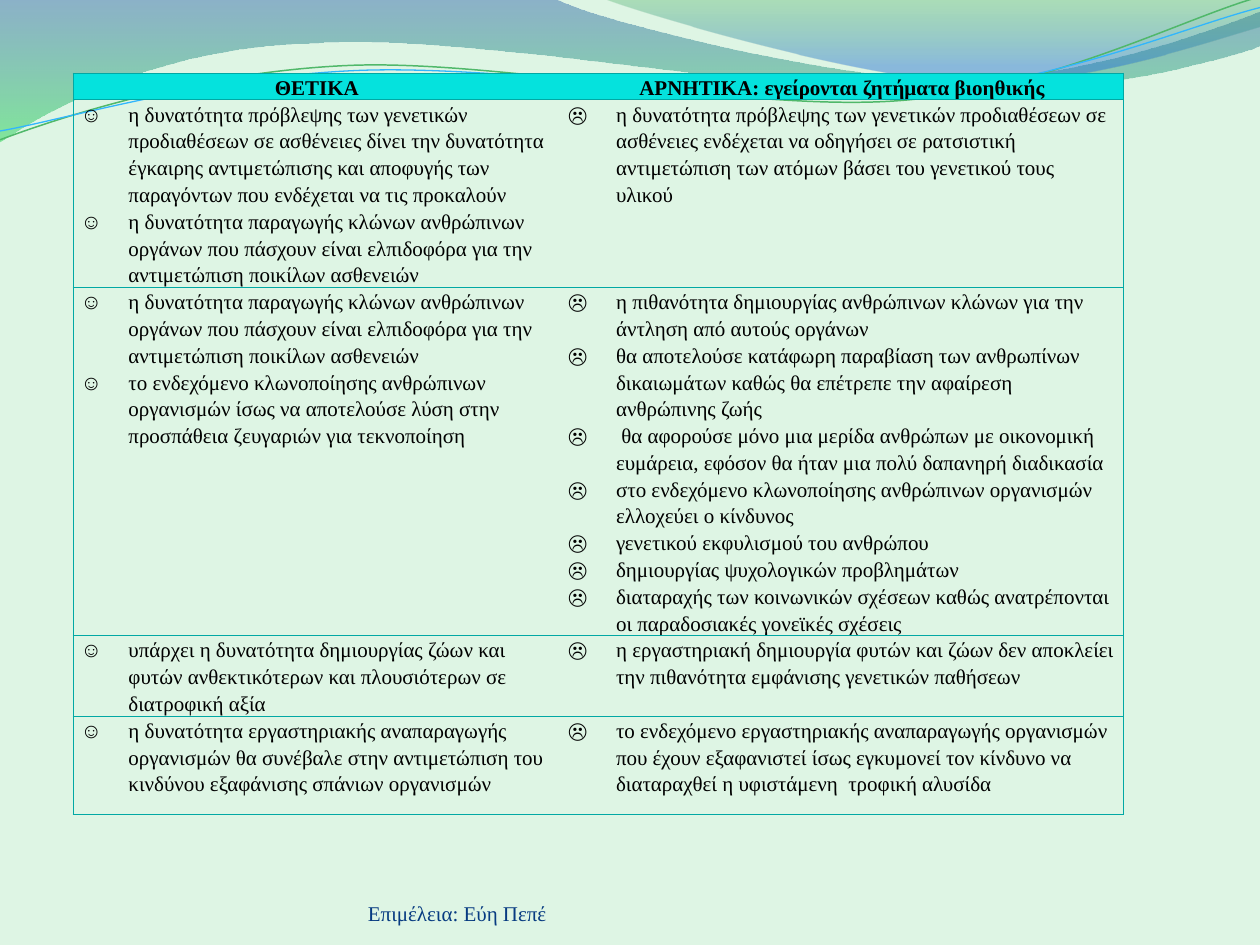
from lxml.etree import SubElement
from pptx import Presentation
from pptx.dml.color import RGBColor
from pptx.enum.text import MSO_ANCHOR, PP_ALIGN
from pptx.oxml.ns import qn
from pptx.util import Emu, Inches, Pt

FONT, SIZE, LINE_PITCH = "Times New Roman", 12, 15.3
BACKGROUND, HEADER_FILL, BORDER = "DEF5E4", "05E2DD", "01A8A4"
BLACK, NAVY = "000000", "073B81"

HEADERS = ["ΘΕΤΙΚΑ", "ΑΡΝΗΤΙΚΑ: εγείρονται ζητήματα βιοηθικής"]
BULLETS = ["☺", "☹"]
ORGAN_CLONES = ("η δυνατότητα παραγωγής κλώνων ανθρώπινων οργάνων που πάσχουν είναι "
                "ελπιδοφόρα για την αντιμετώπιση ποικίλων ασθενειών")
ROWS = [
    (["η δυνατότητα πρόβλεψης των γενετικών προδιαθέσεων σε ασθένειες δίνει την δυνατότητα "
      "έγκαιρης αντιμετώπισης και αποφυγής των παραγόντων που ενδέχεται να τις προκαλούν",
      ORGAN_CLONES],
     ["η δυνατότητα πρόβλεψης των γενετικών προδιαθέσεων σε ασθένειες ενδέχεται να οδηγήσει "
      "σε ρατσιστική αντιμετώπιση των ατόμων βάσει του γενετικού τους υλικού"]),
    ([ORGAN_CLONES,
      "το ενδεχόμενο κλωνοποίησης ανθρώπινων οργανισμών ίσως να αποτελούσε λύση στην "
      "προσπάθεια ζευγαριών για τεκνοποίηση"],
     ["η πιθανότητα δημιουργίας ανθρώπινων κλώνων για την άντληση από αυτούς οργάνων",
      "θα αποτελούσε κατάφωρη παραβίαση των ανθρωπίνων δικαιωμάτων καθώς θα επέτρεπε την "
      "αφαίρεση ανθρώπινης ζωής",
      " θα αφορούσε μόνο μια μερίδα ανθρώπων με οικονομική ευμάρεια, εφόσον θα ήταν μια πολύ "
      "δαπανηρή διαδικασία",
      "στο ενδεχόμενο κλωνοποίησης ανθρώπινων οργανισμών ελλοχεύει ο κίνδυνος",
      "γενετικού εκφυλισμού του ανθρώπου",
      "δημιουργίας ψυχολογικών προβλημάτων",
      "διαταραχής των κοινωνικών σχέσεων καθώς ανατρέπονται οι παραδοσιακές γονεϊκές σχέσεις"]),
    (["υπάρχει η δυνατότητα δημιουργίας ζώων και φυτών ανθεκτικότερων και πλουσιότερων σε "
      "διατροφική αξία"],
     ["η εργαστηριακή δημιουργία φυτών και ζώων δεν αποκλείει την πιθανότητα εμφάνισης "
      "γενετικών παθήσεων"]),
    (["η δυνατότητα εργαστηριακής αναπαραγωγής οργανισμών θα συνέβαλε στην αντιμετώπιση του "
      "κινδύνου εξαφάνισης σπάνιων οργανισμών"],
     ["το ενδεχόμενο εργαστηριακής αναπαραγωγής οργανισμών που έχουν εξαφανιστεί ίσως "
      "εγκυμονεί τον κίνδυνο να διαταραχθεί η υφιστάμενη  τροφική αλυσίδα"]),
]
COLUMN_WIDTHS = [3.87, 4.47]
ROW_HEIGHTS = [0.19, 1.3, 2.75, 0.58, 0.78]

# Each path is a start point, then segments: 2 numbers for a line, 6 for a Bézier curve.
# Gradient stops are position %, colour, opacity %.
WAVE_BANDS = [
    ([(0, 0), (4.4, -0.01), (4.76, 0.17, 6.64, 0.63, 7.58, 0.63),
      (8.53, 0.63, 9.58, 0.26, 10, 0.09), (10.01, 0.36),
      (9.83, 0.44, 8.7, 0.76, 7.46, 0.75), (6.22, 0.75, 3.82, 0.28, 2.57, 0.34),
      (1.29, 0.36, 0.46, 0.83, -0.01, 1.13), (0, 0)],
     [(0, "2960A7", 45), (100, "35DA5E", 55)]),
    ([(4.79, -0.01), (5.09, 0.11, 6.82, 0.62, 7.69, 0.65),
      (8.56, 0.69, 9.61, 0.32, 10, 0.21), (10, 0), (4.79, -0.01)],
     [(0, "36A752", 30), (80, "2472D3", 45)]),
]
WAVE_LINES = [
    ([(0, 1.11), (0.48, 0.93, 1.58, 0.57, 2.77, 0.52), (3.95, 0.47, 5.93, 0.89, 7.13, 0.8),
      (8.33, 0.71, 9.38, 0.15, 9.98, -0.02)], "50B86A", 0.85),
    ([(0, 1.04), (0.47, 0.96, 1.64, 0.61, 2.83, 0.56), (4.03, 0.51, 5.97, 0.84, 7.17, 0.75),
      (8.36, 0.67, 9.41, 0.21, 10, 0.06)], "31B6FD", 0.75),
]


def color(value):
    return RGBColor.from_string(value)


def add_wave(slide, path, close):
    """Build a freeform through the end points, then bend its segments into curves."""
    corners = [(Inches(segment[-2]), Inches(segment[-1])) for segment in path]
    builder = slide.shapes.build_freeform(*corners[0])
    builder.add_line_segments(corners[1:], close=close)
    shape = builder.convert_to_shape()
    shape.shadow.inherit = False
    outline = next(shape._element.iter(qn("a:path")))
    for child in list(outline):
        outline.remove(child)
    for index, segment in enumerate(path):
        tag = "moveTo" if index == 0 else "lnTo" if len(segment) == 2 else "cubicBezTo"
        command = SubElement(outline, qn(f"a:{tag}"))
        for x, y in zip(segment[::2], segment[1::2]):
            SubElement(command, qn("a:pt"), x=str(Inches(x) - shape.left),
                       y=str(Inches(y) - shape.top))
    if close:
        SubElement(outline, qn("a:close"))
    return shape


def set_gradient(shape, stops):
    """Fill from top to bottom with translucent stops."""
    shape.fill.gradient()
    gradient = shape._element.spPr.find(qn("a:gradFill"))
    for child in list(gradient):
        gradient.remove(child)
    stop_list = SubElement(gradient, qn("a:gsLst"))
    for position, value, opacity in stops:
        stop = SubElement(stop_list, qn("a:gs"), pos=str(position * 1000))
        rgb = SubElement(stop, qn("a:srgbClr"), val=value)
        SubElement(rgb, qn("a:alpha"), val=str(opacity * 1000))
    SubElement(gradient, qn("a:lin"), ang="5400000", scaled="0")


def write(paragraph, text, value, bold=False):
    run = paragraph.add_run()
    run.text = text
    for name, setting in {"name": FONT, "size": Pt(SIZE), "bold": bold}.items():
        setattr(run.font, name, setting)
    run.font.color.rgb = color(value)


def set_bullet(paragraph, character):
    properties = paragraph._p.get_or_add_pPr()
    properties.set("marL", str(Inches(0.38)))
    properties.set("indent", str(-Inches(0.38)))
    SubElement(properties, qn("a:buFont"), typeface=FONT)
    SubElement(properties, qn("a:buChar"), char=character)


def set_borders(cell, sides):
    properties = cell._tc.get_or_add_tcPr()
    for index, side in enumerate("LRTB"):
        line = SubElement(properties, qn(f"a:ln{side}"), w=str(Pt(0.75)))
        if side in sides:
            fill = SubElement(line, qn("a:solidFill"))
            SubElement(fill, qn("a:srgbClr"), val=BORDER)
        else:
            SubElement(line, qn("a:noFill"))
        properties.insert(index, line)


def fill_cell(cell, texts, bullet=None):
    margins = {"margin_left": 0.06, "margin_right": 0.06, "margin_top": 0, "margin_bottom": 0}
    for name, value in margins.items():
        setattr(cell, name, Inches(value))
    frame = cell.text_frame
    for index, text in enumerate(texts):
        paragraph = frame.add_paragraph() if index else frame.paragraphs[0]
        paragraph.line_spacing = Pt(LINE_PITCH)
        if bullet:
            set_bullet(paragraph, bullet)
        else:
            paragraph.alignment = PP_ALIGN.CENTER
        write(paragraph, text, BLACK, bold=not bullet)


def add_pros_cons_table(slide):
    table = slide.shapes.add_table(
        len(ROW_HEIGHTS), len(COLUMN_WIDTHS), Inches(0.58), Inches(0.58),
        Inches(sum(COLUMN_WIDTHS)), Inches(sum(ROW_HEIGHTS))).table
    table.first_row = table.horz_banding = False
    for column, width in zip(table.columns, COLUMN_WIDTHS):
        column.width = Inches(width)
    for row, height in zip(table.rows, ROW_HEIGHTS):
        row.height = Inches(height)
    for r, texts_by_column in enumerate([[[header] for header in HEADERS], *ROWS]):
        for c, texts in enumerate(texts_by_column):
            cell = table.cell(r, c)
            fill_cell(cell, texts, BULLETS[c] if r else None)
            if r:
                cell.fill.background()
            else:
                cell.fill.solid()
                cell.fill.fore_color.rgb = color(HEADER_FILL)
            set_borders(cell, "LTB" if c == 0 else "RTB")


def add_footer(slide):
    frame = slide.shapes.add_textbox(
        Inches(2.92), Inches(6.95), Inches(3.67), Inches(0.4)).text_frame
    for side in ("left", "right", "top", "bottom"):
        setattr(frame, f"margin_{side}", Emu(0))
    frame.word_wrap = True
    frame.vertical_anchor = MSO_ANCHOR.BOTTOM
    write(frame.paragraphs[0], "Επιμέλεια: Εύη Πεπέ", NAVY)


def main():
    presentation = Presentation()
    presentation.slide_width, presentation.slide_height = Inches(10), Inches(7.5)
    slide = presentation.slides.add_slide(presentation.slide_layouts[6])
    slide.background.fill.solid()
    slide.background.fill.fore_color.rgb = color(BACKGROUND)
    for path, stops in WAVE_BANDS:
        band = add_wave(slide, path, close=True)
        set_gradient(band, stops)
        band.line.fill.background()
    for path, value, width in WAVE_LINES:
        wave = add_wave(slide, path, close=False)
        wave.fill.background()
        wave.line.color.rgb = color(value)
        wave.line.width = Pt(width)
    add_footer(slide)
    add_pros_cons_table(slide)
    presentation.save("out.pptx")


if __name__ == "__main__":
    main()
